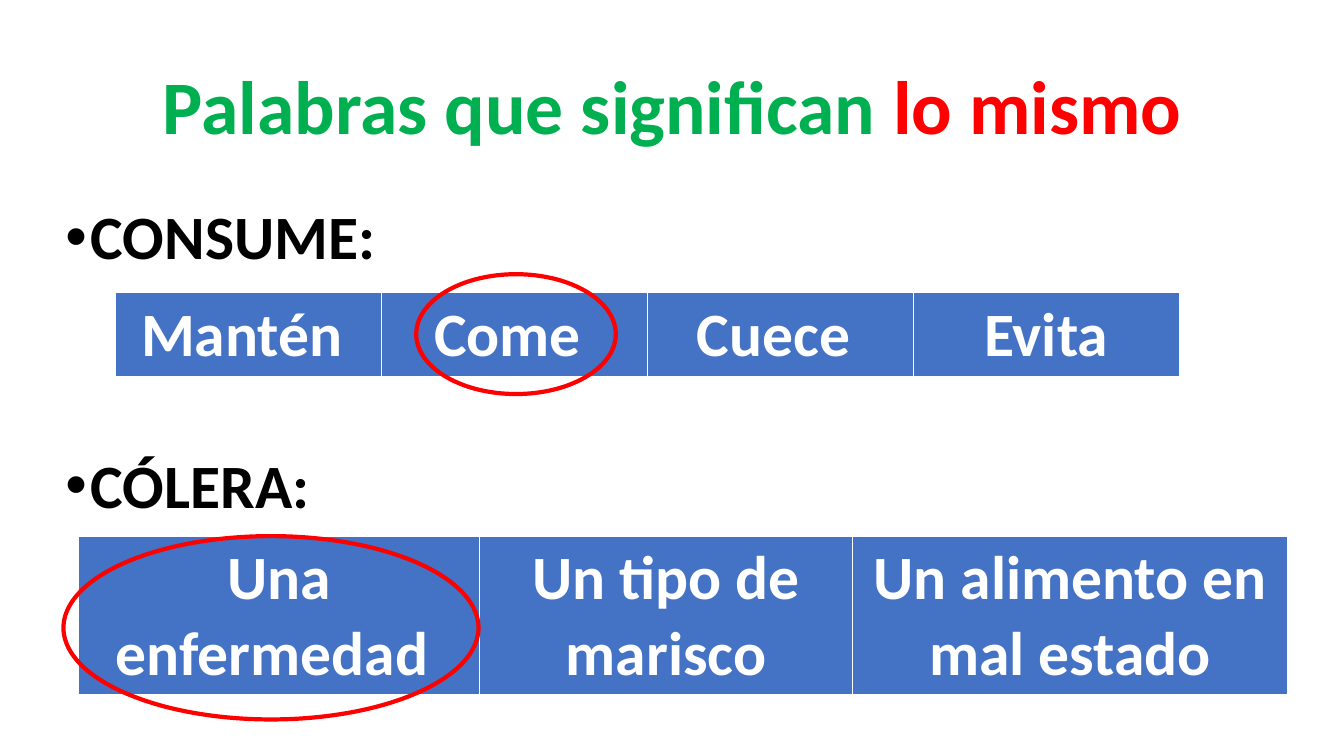
"""Build a Spanish vocabulary slide with two synonym questions and circled answers."""
import pptx
import pptx.dml.color
import pptx.enum.shapes
import pptx.enum.text
import pptx.oxml.ns
import pptx.util
from lxml import etree

Cm = pptx.util.Cm
Pt = pptx.util.Pt
CENTER = pptx.enum.text.PP_ALIGN.CENTER
MIDDLE = pptx.enum.text.MSO_ANCHOR.MIDDLE
OVAL = pptx.enum.shapes.MSO_SHAPE.OVAL
colors = {"green": "00B050", "red": "FF0000", "black": "000000",
          "white": "FFFFFF", "blue": "4472C4"}


def color(name):
    return pptx.dml.color.RGBColor.from_string(colors[name])


def style(run, size, name):
    run.font.name = "Calibri"
    run.font.size = Pt(size)
    run.font.bold = True
    run.font.color.rgb = color(name)


deck = pptx.Presentation()
deck.slide_width = Cm(33.87)
deck.slide_height = Cm(19.05)
slide = deck.slides.add_slide(deck.slide_layouts[6])
shapes = slide.shapes

title = shapes.add_textbox(Cm(2.34), Cm(0.94), Cm(29.21), Cm(3.68)).text_frame
title.word_wrap = True
title.vertical_anchor = MIDDLE
head = title.paragraphs[0]
head.alignment = CENTER
head.line_spacing = 0.9
for text, name in [("Palabras que significan ", "green"), ("lo mismo", "red")]:
    run = head.add_run()
    run.text = text
    style(run, 54, name)

body = shapes.add_textbox(Cm(1.4), Cm(5.08), Cm(31.42), Cm(12.09)).text_frame
body.word_wrap = True
body.text = "CONSUME:\nCÓLERA:"
for item, gap in zip(body.paragraphs, [0, 130]):
    item.line_spacing = 0.9
    item.space_before = Pt(gap)
    style(item.runs[0], 44, "black")
    props = item._p.get_or_add_pPr()
    props.set("marL", str(Cm(0.64)))
    props.set("indent", str(-Cm(0.64)))
    font = etree.SubElement(props, pptx.oxml.ns.qn("a:buFont"))
    font.set("typeface", "Arial")
    mark = etree.SubElement(props, pptx.oxml.ns.qn("a:buChar"))
    mark.set("char", "•")

tables = [
    (2.92, 7.37, 2.11, [6.7] * 4, ["Mantén ", "Come ", "Cuece ", "Evita"]),
    (1.98, 13.51, 3.99, [10.11, 9.4, 10.97],
     ["Una enfermedad ", "Un tipo de marisco", "Un alimento en mal estado"]),
]
for left, top, height, widths, words in tables:
    table = shapes.add_table(1, len(words), Cm(left), Cm(top),
                             Cm(sum(widths)), Cm(height)).table
    for col, width, cell, word in zip(table.columns, widths,
                                      table.rows[0].cells, words):
        col.width = Cm(width)
        cell.fill.solid()
        cell.fill.fore_color.rgb = color("blue")
        para = cell.text_frame.paragraphs[0]
        para.text = word
        para.alignment = CENTER
        style(para.runs[0], 44, "white")

for box in [(10.49, 6.91, 5.03, 3.02), (1.6, 13.51, 10.46, 4.62)]:
    ring = shapes.add_shape(OVAL, *map(Cm, box))
    ring.shadow.inherit = False
    ring.fill.background()
    ring.line.color.rgb = color("red")
    ring.line.width = Pt(3)

deck.save("out.pptx")
